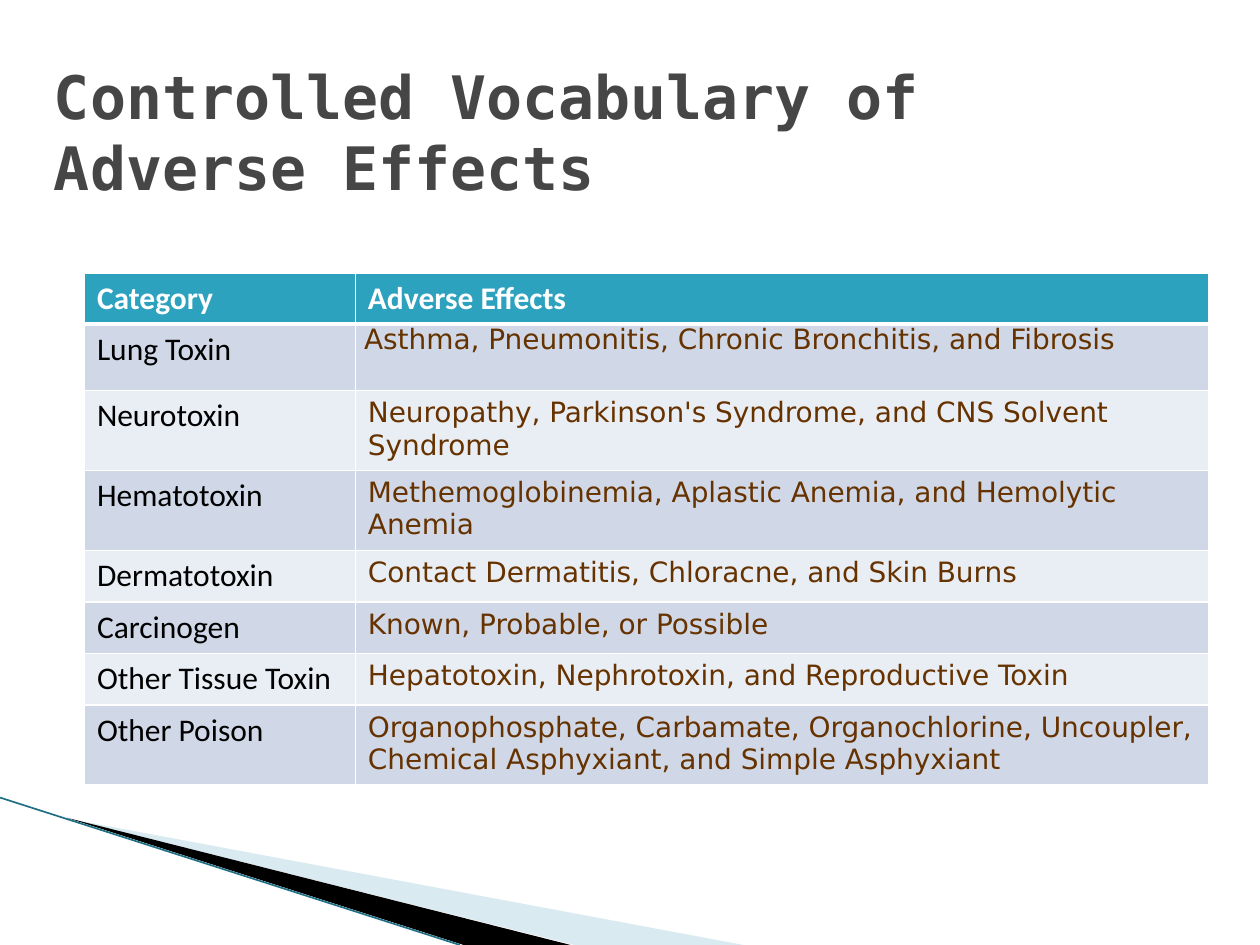
from dataclasses import dataclass

from lxml import etree
from pptx import Presentation
from pptx.dml.color import RGBColor
from pptx.enum.shapes import MSO_CONNECTOR
from pptx.enum.text import MSO_ANCHOR
from pptx.oxml.ns import qn
from pptx.util import Inches, Pt

STRAIGHT = MSO_CONNECTOR.STRAIGHT
MIDDLE = MSO_ANCHOR.MIDDLE


@dataclass(frozen=True)
class Theme:
    title_font: str = "DejaVu Sans Mono"
    label_font: str = "Calibri"
    effect_font: str = "DejaVu Sans"
    title_size: float = 34.2
    label_size: float = 18
    effect_size: float = 16
    rule_width: float = 0.95
    white: str = "FFFFFF"
    black: str = "000000"
    title: str = "464646"
    effect: str = "663300"
    header: str = "2DA2BF"
    bands: tuple = ("D0D8E8", "E9EDF4")
    pale_wedge: str = "A0CBDC"
    rule: str = "1F7085"


THEME = Theme()
COLUMN_WIDTHS = (2.15, 6.77)
ROW_HEIGHTS = (0.4, 0.53, 0.63, 0.63, 0.41, 0.41, 0.41, 0.63)
HEADINGS = ("Category", "Adverse Effects")
VOCABULARY = (
    ("Lung Toxin", "Asthma, Pneumonitis, Chronic Bronchitis, and Fibrosis"),
    ("Neurotoxin", "Neuropathy, Parkinson's Syndrome, and CNS Solvent Syndrome"),
    ("Hematotoxin", "Methemoglobinemia, Aplastic Anemia, and Hemolytic Anemia"),
    ("Dermatotoxin", "Contact Dermatitis, Chloracne, and Skin Burns"),
    ("Carcinogen", "Known, Probable, or Possible"),
    ("Other Tissue Toxin", "Hepatotoxin, Nephrotoxin, and Reproductive Toxin"),
    ("Other Poison", "Organophosphate, Carbamate, Organochlorine, Uncoupler, "
                     "Chemical Asphyxiant, and Simple Asphyxiant"),
)


def style_font(para, name, size, color, bold=False):
    font = para.font
    font.name, font.size, font.bold = name, Pt(size), bold
    font.color.rgb = RGBColor.from_string(color)


def add_wedge(page, left, top, points, color, opacity=100):
    """Draw a filled outline whose points are relative to left and top."""
    corners = [(Inches(left + x), Inches(top + y)) for x, y in points]
    builder = page.shapes.build_freeform(*corners[0], scale=1.0)
    builder.add_line_segments(corners[1:], close=True)
    wedge = builder.convert_to_shape()
    wedge.shadow.inherit = False
    wedge.line.fill.background()
    wedge.fill.solid()
    wedge.fill.fore_color.rgb = RGBColor.from_string(color)
    if opacity < 100:
        tint = wedge.fill._xPr.find(".//" + qn("a:srgbClr"))
        etree.SubElement(tint, qn("a:alpha"), val=str(opacity * 1000))


def add_corner_sweep(page, left, top, width, height):
    """Two wedges and a thin rule that run down to the slide's lower edge."""
    add_wedge(page, left, top,
              [(0.55, 0.17), (width, height), (4.56, height)],
              THEME.pale_wedge, opacity=40)
    add_wedge(page, left, top,
              [(0.53, 0.16), (4.53, height), (3.68, height)], THEME.black)
    rule = page.shapes.add_connector(
        STRAIGHT, Inches(left), Inches(top),
        Inches(left + 3.65), Inches(top + height))
    rule.line.width = Pt(THEME.rule_width)
    rule.line.color.rgb = RGBColor.from_string(THEME.rule)
    etree.SubElement(rule._element.spPr, qn("a:effectLst"))


def add_title(page, left, top, width, height, text):
    box = page.shapes.add_textbox(
        Inches(left), Inches(top), Inches(width), Inches(height))
    frame = box.text_frame
    frame.word_wrap = True
    frame.vertical_anchor = MIDDLE
    frame.text = text
    style_font(frame.paragraphs[0], THEME.title_font, THEME.title_size,
               THEME.title, bold=True)


def set_borders(cell, top=1, bottom=1):
    """Give the cell white edges; widths are in points."""
    properties = cell._tc.get_or_add_tcPr()
    for edge, width in (("L", 1), ("R", 1), ("T", top), ("B", bottom)):
        line = etree.SubElement(properties, qn(f"a:ln{edge}"), w=str(Pt(width)))
        fill = etree.SubElement(line, qn("a:solidFill"))
        etree.SubElement(fill, qn("a:srgbClr"), val=THEME.white)


def fill_cell(cell, text, row, column):
    is_header = row == 0
    set_borders(cell, top=3 if row == 1 else 1, bottom=3 if is_header else 1)
    cell.fill.solid()
    color = THEME.header if is_header else THEME.bands[(row - 1) % 2]
    cell.fill.fore_color.rgb = RGBColor.from_string(color)
    cell.text = text
    para = cell.text_frame.paragraphs[0]
    if is_header:
        style_font(para, THEME.label_font, THEME.label_size, THEME.white, bold=True)
    elif column == 0:
        style_font(para, THEME.label_font, THEME.label_size, THEME.black)
    else:
        style_font(para, THEME.effect_font, THEME.effect_size, THEME.effect)


def add_vocabulary_table(page, left, top, width, height):
    rows = (HEADINGS, *VOCABULARY)
    table = page.shapes.add_table(
        len(rows), len(HEADINGS),
        Inches(left), Inches(top), Inches(width), Inches(height)).table
    for column, column_width in zip(table.columns, COLUMN_WIDTHS):
        column.width = Inches(column_width)
    for row, row_height in zip(table.rows, ROW_HEIGHTS):
        row.height = Inches(row_height)
    for row, texts in enumerate(rows):
        for column, text in enumerate(texts):
            fill_cell(table.cell(row, column), text, row, column)

    # The first entry sits tight against the header
    first_effect = table.cell(1, 1)
    first_effect.margin_left = first_effect.margin_right = Inches(0.07)
    first_effect.margin_top = first_effect.margin_bottom = 0


def main():
    deck = Presentation()
    deck.slide_width, deck.slide_height = Inches(10), Inches(7.5)
    page = deck.slides.add_slide(deck.slide_layouts[6])

    add_corner_sweep(page, 0, 6.33, 5.9, 1.17)
    add_title(page, 0.33, 0.5, 9.25, 1.08,
              "Controlled Vocabulary of Adverse Effects")
    add_vocabulary_table(page, 0.67, 2.17, sum(COLUMN_WIDTHS), sum(ROW_HEIGHTS))

    deck.save("out.pptx")


if __name__ == "__main__":
    main()
